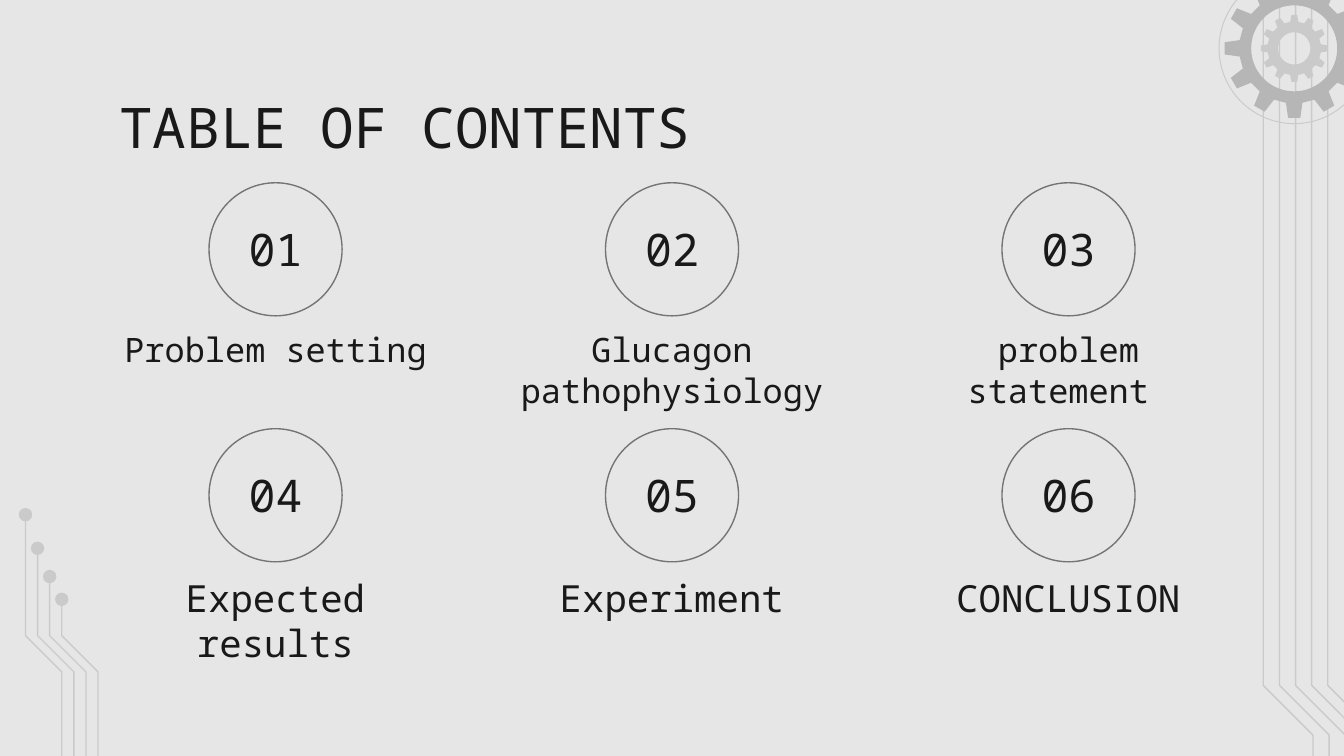
from math import cos, radians, sin

from pptx import Presentation
from pptx.dml.color import RGBColor
from pptx.enum.shapes import MSO_SHAPE
from pptx.enum.text import MSO_ANCHOR as ANCHOR, PP_ALIGN as ALIGN
from pptx.util import Inches, Pt

FONT = "Noto Sans Mono"
PAPER = RGBColor(0xE6, 0xE6, 0xE6)
INK = RGBColor(0x19, 0x19, 0x19)
RING = RGBColor(0x74, 0x74, 0x74)
LIGHT = RGBColor(0xCA, 0xCA, 0xCA)
MID = RGBColor(0xB6, 0xB6, 0xB6)

WIDTH = 10
HEIGHT = WIDTH * 9 / 16
TOPICS = [
    [("01", "Problem setting"), ("02", "Glucagon pathophysiology"), ("03", "problem statement ")],
    [("04", "Expected results"), ("05", "Experiment"), ("06", "CONCLUSION")],
]
LABEL_SIZES = [18, 20]


def paint(s, fill=None, line=None, weight=0.75):
    """Set fill and line of a shape, leaving out whichever is not given."""
    s.shadow.inherit = False
    if fill is None:
        s.fill.background()
    else:
        s.fill.solid()
        s.fill.fore_color.rgb = fill
    if line is None:
        s.line.fill.background()
    else:
        s.line.color.rgb = line
        s.line.width = Pt(weight)


def add_text(slide, text, x, y, w, h, size=18, align=ALIGN.LEFT, anchor=ANCHOR.TOP):
    """Add a wrapped text box."""
    tf = slide.shapes.add_textbox(Inches(x), Inches(y), Inches(w), Inches(h)).text_frame
    tf.word_wrap = True
    tf.vertical_anchor = anchor
    tf.margin_left = tf.margin_right = tf.margin_top = tf.margin_bottom = Inches(0.1)
    p = tf.paragraphs[0]
    p.alignment = align
    r = p.add_run()
    r.text = text
    r.font.name = FONT
    r.font.size = Pt(size)
    r.font.color.rgb = INK


def add_circle(slide, cx, cy, radius, **colors):
    """Add a circle around a centre point."""
    s = slide.shapes.add_shape(MSO_SHAPE.OVAL, Inches(cx - radius), Inches(cy - radius),
                               Inches(2 * radius), Inches(2 * radius))
    paint(s, **colors)


def add_outline(slide, contours, close=True, **colors):
    """Add one freeform made of the given contours."""
    contours = [[(Inches(x), Inches(y)) for x, y in c] for c in contours]
    builder = slide.shapes.build_freeform(*contours[0][0])
    for i, points in enumerate(contours):
        if i:
            builder.move_to(*points[0])
        builder.add_line_segments(points[1:], close=close)
    paint(builder.convert_to_shape(), **colors)


def add_trace(slide, x, top, bend, shift):
    """Add a circuit trace that steps right at the bend and runs to the slide's foot."""
    points = [(x, top), (x, bend), (x + shift, bend + shift), (x + shift, HEIGHT)]
    add_outline(slide, [points], close=False, line=LIGHT)


def add_right_traces(slide, x, y):
    """Add the five long traces on the right."""
    for i in range(5):
        add_trace(slide, x + 0.12 * i, y, y + 5.1, 0.37)


def add_left_traces(slide, x, y):
    """Add the four traces that start in dots on the left."""
    starts = [(x + 0.09 * i, y + drop) for i, drop in enumerate([0, 0.25, 0.46, 0.63])]
    for start_x, start_y in starts:
        add_trace(slide, start_x, start_y, y + 0.9, 0.27)
    for start_x, start_y in starts:
        add_circle(slide, start_x, start_y, 0.05, fill=LIGHT)


def add_gear(slide, cx, cy, tip, root, hole, fill):
    """Add a twelve-toothed gear with a round hole."""
    def polar(radius, angle):
        return cx + radius * cos(radians(angle)), cy + radius * sin(radians(angle))

    profile = [(root, -8.6), (tip, -5), (tip, 5), (root, 8.6)]
    teeth = [polar(radius, 30 * k + a) for k in range(12) for radius, a in profile]
    bore = [polar(hole, -a) for a in range(0, 360, 5)]
    add_outline(slide, [teeth, bore], fill=fill)


def add_gears(slide, cx, cy):
    """Add the nested gears with their thin outer ring."""
    add_gear(slide, cx, cy, 0.25, 0.2, 0.12, LIGHT)
    add_gear(slide, cx, cy, 0.52, 0.41, 0.32, MID)
    add_circle(slide, cx, cy, 0.56, line=LIGHT, weight=0.5)


def add_topic(slide, number, label, x, y, w, size):
    """Add a ringed number with its label underneath."""
    ring = 0.99
    left = x + (w - ring) / 2
    add_circle(slide, x + w / 2, y + ring / 2, ring / 2, line=RING)
    add_text(slide, number, left, y + 0.21, ring, 0.58, size=24,
             align=ALIGN.CENTER, anchor=ANCHOR.BOTTOM)
    add_text(slide, label, x, y + ring, w, 0.83, size=size, align=ALIGN.CENTER)


def add_topics(slide, x, y):
    """Add the grid of topics."""
    for row, (topics, size) in enumerate(zip(TOPICS, LABEL_SIZES)):
        for col, (number, label) in enumerate(topics):
            add_topic(slide, number, label, x + 2.95 * col, y + 1.83 * row, 2.54, size)


def main():
    """Build and save the contents slide."""
    prs = Presentation()
    prs.slide_width, prs.slide_height = Inches(WIDTH), Inches(HEIGHT)
    slide = prs.slides.add_slide(prs.slide_layouts[6])
    slide.background.fill.solid()
    slide.background.fill.fore_color.rgb = PAPER
    add_right_traces(slide, 9.4, 0)
    add_left_traces(slide, 0.19, 3.83)
    add_gears(slide, 9.63, 0.36)
    add_text(slide, "TABLE OF CONTENTS", 0.79, 0.59, 8.43, 0.63, size=30)
    add_topics(slide, 0.78, 1.36)
    prs.save("out.pptx")


if __name__ == "__main__":
    main()
